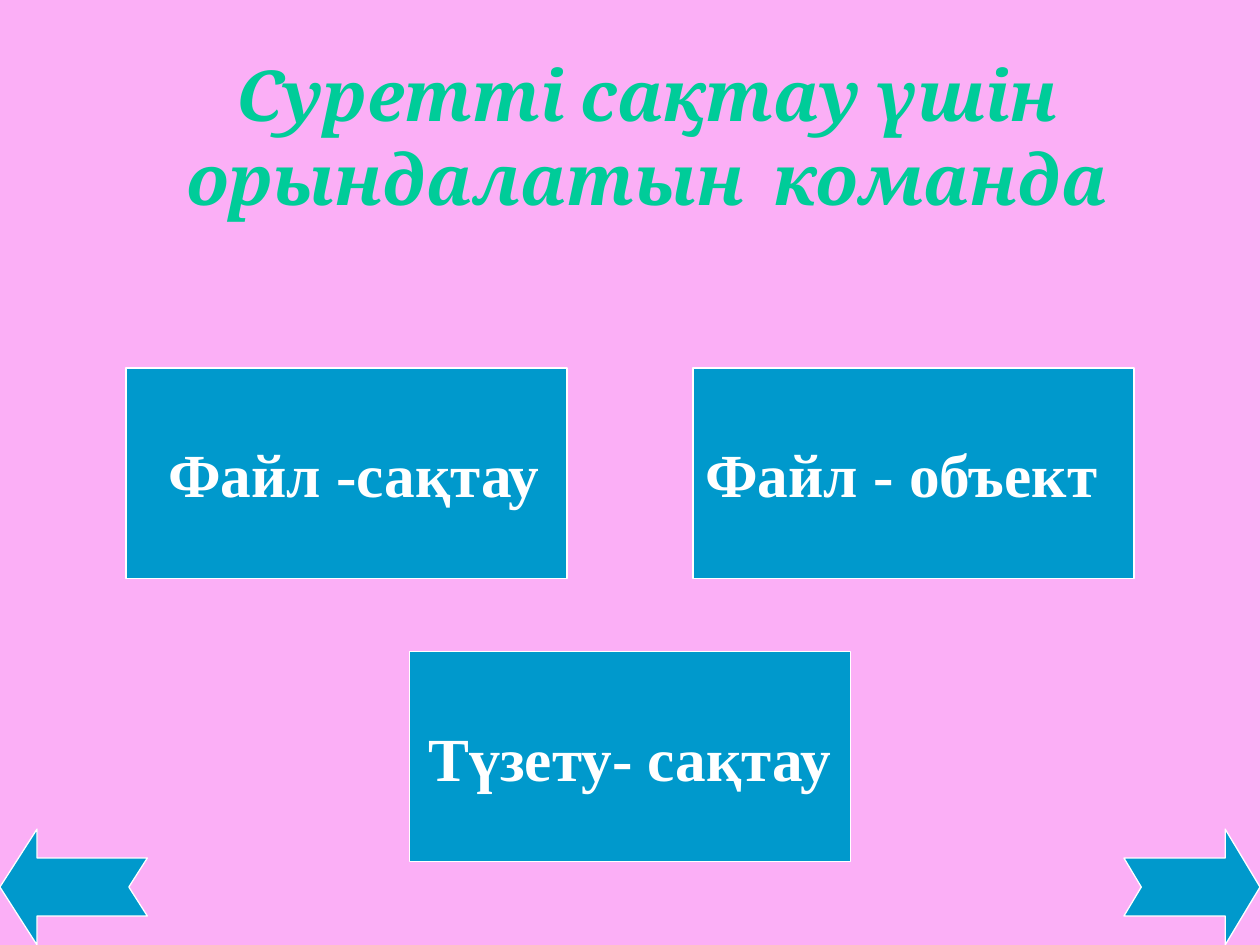
from pptx import Presentation
from pptx.dml.color import RGBColor
from pptx.enum.shapes import MSO_SHAPE
from pptx.enum.text import MSO_ANCHOR, PP_ALIGN
from pptx.util import Inches, Pt

COLORS = {"back": "FBAFF6", "fill": "0099CC", "line": "FFFFFF",
          "title": "00CC99", "text": "FFFFFF"}


def color(name):
    return RGBColor.from_string(COLORS[name])


def write(frame, text, face, size, tint, align=PP_ALIGN.CENTER, italic=False):
    frame.text = text
    para = frame.paragraphs[0]
    para.alignment = align
    font = para.runs[0].font
    font.name, font.size = face, Pt(size)
    font.bold, font.italic = True, italic
    font.color.rgb = color(tint)
    return para


def add_block(slide, kind, box):
    shape = slide.shapes.add_shape(kind, *map(Inches, box))
    shape.shadow.inherit = False
    shape.fill.solid()
    shape.fill.fore_color.rgb = color("fill")
    shape.line.color.rgb = color("line")
    shape.line.width = Pt(0.75)
    return shape


def add_title(slide, box, text):
    frame = slide.shapes.add_textbox(*map(Inches, box)).text_frame
    frame.word_wrap = True
    para = write(frame, text, "Cambria", 40, "title", italic=True)
    para.space_before = Pt(8)


def add_answer(slide, box, text, align):
    frame = add_block(slide, MSO_SHAPE.RECTANGLE, box).text_frame
    frame.vertical_anchor = MSO_ANCHOR.MIDDLE
    # Left-aligned text needs the full box width
    frame.word_wrap = align == PP_ALIGN.LEFT
    write(frame, text, "Times New Roman", 35, "text", align)


def add_arrow(slide, box, notch, back=False):
    arrow = add_block(slide, MSO_SHAPE.NOTCHED_RIGHT_ARROW, box)
    arrow.adjustments[0] = 0.5
    arrow.adjustments[1] = notch
    if back:
        arrow._element.spPr.get_or_add_xfrm().set("flipH", "1")


def main():
    deck = Presentation()
    deck.slide_width, deck.slide_height = Inches(10), Inches(7.5)
    slide = deck.slides.add_slide(deck.slide_layouts[6])
    slide.background.fill.solid()
    slide.background.fill.fore_color.rgb = color("back")

    # Navigation arrows in the bottom corners
    add_arrow(slide, (8.92, 6.58, 1.08, 0.92), 0.3)
    add_arrow(slide, (0, 6.58, 1.17, 0.92), 0.32, back=True)

    # Question
    add_title(slide, (0.51, 0.36, 9.25, 6.75),
              "Суретті сақтау үшін орындалатын  команда")

    # Answer choices: two above, one centred below
    wide, high = 3.5, 1.67
    answers = [
        (1, 2.92, " Файл -сақтау", PP_ALIGN.CENTER),
        (5.5, 2.92, "Файл - объект", PP_ALIGN.LEFT),
        (3.25, 5.17, "Түзету- сақтау", PP_ALIGN.CENTER),
    ]
    for left, top, text, align in answers:
        add_answer(slide, (left, top, wide, high), text, align)

    deck.save("out.pptx")


if __name__ == "__main__":
    main()
